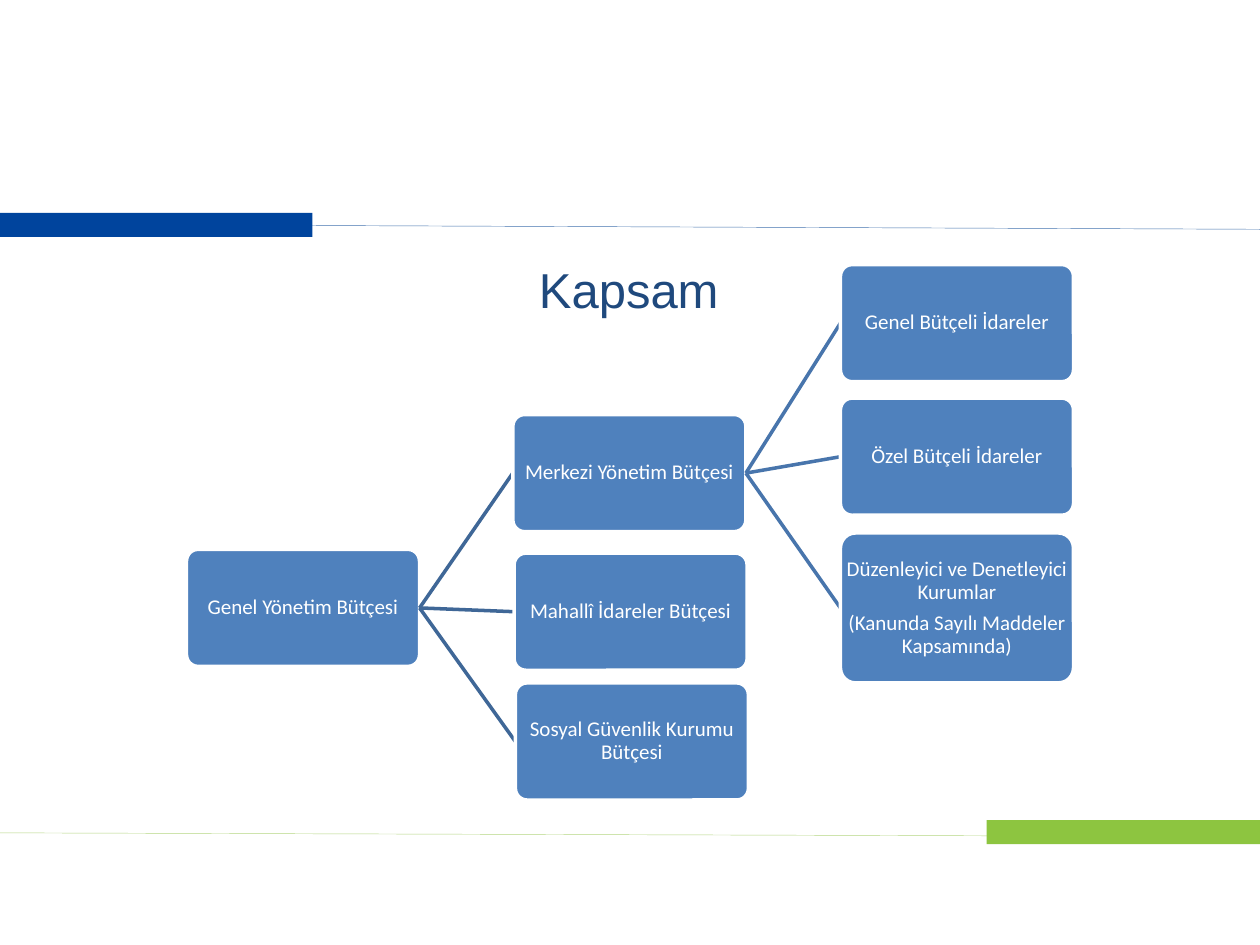
from lxml.etree import SubElement
from pptx import Presentation
from pptx.dml.color import RGBColor
from pptx.enum.shapes import MSO_CONNECTOR, MSO_SHAPE
from pptx.enum.text import MSO_ANCHOR, PP_ALIGN
from pptx.oxml.ns import qn
from pptx.util import Inches, Pt

WHITE = RGBColor(0xFF, 0xFF, 0xFF)
NAVY = RGBColor(0x1F, 0x49, 0x7D)
BLUE = RGBColor(0x4F, 0x81, 0xBD)
FIRST_BRANCH = RGBColor(0x3F, 0x67, 0x97)
SECOND_BRANCH = RGBColor(0x48, 0x75, 0xAC)
BAND_BLUE = RGBColor(0x00, 0x44, 0x9D)
RULE_BLUE = RGBColor(0x43, 0x72, 0xAF)
BAND_GREEN = RGBColor(0x8D, 0xC5, 0x40)
RULE_GREEN = RGBColor(0xB5, 0xD7, 0x82)

COLUMNS, ROWS = 100, 75
BOX_WIDTH, BOX_HEIGHT = 18.5, 9.3
RIGHT_SIDE, LEFT_SIDE = 3, 1


class ChartPage:
    """Style and drawing methods; lengths are columns and rows of the grid."""

    def __init__(self, deck):
        self.column = deck.slide_width / COLUMNS
        self.row = deck.slide_height / ROWS
        self.page = deck.slides.add_slide(deck.slide_layouts[6])

    def place(self, *lengths):
        steps = (self.column, self.row, self.column, self.row)
        return [round(length * step) for length, step in zip(lengths, steps)]

    def set_text(self, box, text, font, size, color):
        frame = box.text_frame
        frame.word_wrap = True
        frame.vertical_anchor = MSO_ANCHOR.MIDDLE
        frame.text = text
        for para in frame.paragraphs:
            para.alignment = PP_ALIGN.CENTER
            for span in para.runs:
                span.font.name = font
                span.font.size = Pt(size)
                span.font.color.rgb = color
        return frame

    def title(self, text, *area):
        box = self.page.shapes.add_textbox(*self.place(*area))
        self.set_text(box, text, "Arial", 28, NAVY)

    def band(self, color, *area):
        band = self.page.shapes.add_shape(MSO_SHAPE.RECTANGLE, *self.place(*area))
        band.shadow.inherit = False
        band.fill.solid()
        band.fill.fore_color.rgb = color
        band.line.fill.background()

    def line(self, color, width, *ends):
        line = self.page.shapes.add_connector(MSO_CONNECTOR.STRAIGHT, *self.place(*ends))
        line.line.color.rgb = color
        line.line.width = Pt(width)
        SubElement(line._element.spPr, qn("a:effectLst"))
        return line

    def node(self, text, left, top, height=BOX_HEIGHT):
        box = self.page.shapes.add_shape(
            MSO_SHAPE.ROUNDED_RECTANGLE, *self.place(left, top, BOX_WIDTH, height))
        box.adjustments[0] = 0.1
        box.shadow.inherit = False
        box.fill.solid()
        box.fill.fore_color.rgb = BLUE
        box.line.color.rgb = WHITE
        box.line.width = Pt(2)
        frame = self.set_text(box, text, "Calibri", 12, WHITE)
        frame.margin_left = frame.margin_right = Inches(0.01)
        frame.margin_top = frame.margin_bottom = Inches(0.01)
        for para in frame.paragraphs:
            para.line_spacing = 0.9
            para.space_after = Pt(5)
        return box

    def branch(self, parent, color, children):
        """Add each child box over the end of its line from the parent."""
        boxes = []
        for child in children:
            line = self.line(color, 2, 0, 0, 0, 0)
            box = self.node(*child)
            line.begin_connect(parent, RIGHT_SIDE)
            line.end_connect(box, LEFT_SIDE)
            boxes.append(box)
        return boxes


def main():
    deck = Presentation()
    deck.slide_width, deck.slide_height = Inches(10), Inches(7.5)
    chart = ChartPage(deck)

    # Bands and thin rules above and below the content
    chart.line(RULE_BLUE, 0.25, 0, 17.8, 100, 18.2)
    chart.band(BAND_BLUE, 0, 16.9, 24.8, 1.9)
    chart.line(RULE_GREEN, 0.25, 100, 66.4, 0, 66.1)
    chart.band(BAND_GREEN, 78.3, 65.1, 21.7, 1.9)

    chart.title("Kapsam", 4.9, 18.6, 90, 8.6)

    # Budget tree, from left to right
    root = chart.node("Genel Yönetim Bütçesi", 14.8, 43.6)
    central, *others = chart.branch(root, FIRST_BRANCH, [
        ("Merkezi Yönetim Bütçesi", 40.7, 32.9),
        ("Mahallî İdareler Bütçesi", 40.8, 43.9),
        ("Sosyal Güvenlik Kurumu Bütçesi", 40.9, 54.2),
    ])
    chart.branch(central, SECOND_BRANCH, [
        ("Genel Bütçeli İdareler", 66.7, 21),
        ("Özel Bütçeli İdareler", 66.7, 31.6),
        ("Düzenleyici ve Denetleyici Kurumlar\n(Kanunda Sayılı Maddeler Kapsamında)",
         66.7, 42.3, 11.9),
    ])

    deck.save("out.pptx")


if __name__ == "__main__":
    main()
